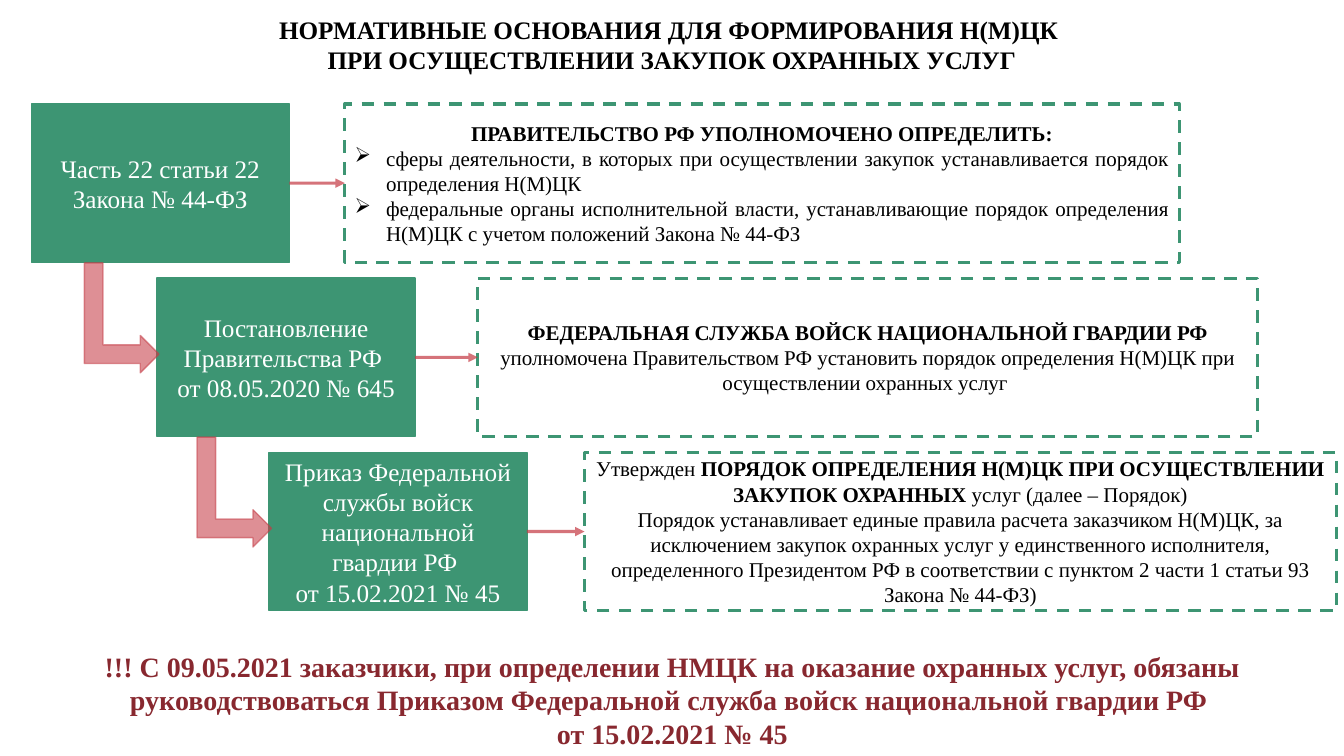
from dataclasses import dataclass

from lxml.etree import SubElement
from pptx import Presentation
from pptx.dml.color import RGBColor
from pptx.enum.dml import MSO_LINE
from pptx.enum.shapes import MSO_CONNECTOR, MSO_SHAPE
from pptx.enum.text import MSO_ANCHOR, PP_ALIGN
from pptx.oxml.ns import qn
from pptx.util import Cm, Pt

# Content: a paragraph is a tuple of (text, bold) runs
TITLE = [
    (("НОРМАТИВНЫЕ ОСНОВАНИЯ ДЛЯ ФОРМИРОВАНИЯ Н(М)ЦК ", True),
     ("\n", True),
     ("ПРИ ОСУЩЕСТВЛЕНИИ ЗАКУПОК ОХРАННЫХ УСЛУГ", True)),
]
ACTS = [
    [(("Часть 22 статьи 22 Закона № 44-ФЗ", False),)],
    [(("Постановление Правительства РФ ", False),),
     (("от 08.05.2020 № 645", False),)],
    [(("Приказ Федеральной службы войск национальной гвардии РФ ", False),),
     (("от 15.02.2021 № 45", False),)],
]
NOTES = [
    [(("ПРАВИТЕЛЬСТВО РФ УПОЛНОМОЧЕНО ОПРЕДЕЛИТЬ:", True),),
     (("сферы деятельности, в которых при осуществлении закупок "
       "устанавливается порядок определения Н(М)ЦК", False),),
     (("федеральные органы исполнительной власти, устанавливающие порядок "
       "определения Н(М)ЦК с учетом положений Закона № 44-ФЗ", False),)],
    [(("ФЕДЕРАЛЬНАЯ СЛУЖБА ВОЙСК НАЦИОНАЛЬНОЙ ГВАРДИИ РФ ", True),
      ("уполномочена Правительством РФ установить порядок определения "
       "Н(М)ЦК при осуществлении охранных услуг ", False))],
    [(("Утвержден ", False),
      ("ПОРЯДОК ОПРЕДЕЛЕНИЯ Н(М)ЦК ПРИ ОСУЩЕСТВЛЕНИИ ЗАКУПОК ОХРАННЫХ ", True),
      ("услуг (далее – Порядок)", False)),
     (("Порядок устанавливает единые правила расчета заказчиком Н(М)ЦК, за "
       "исключением закупок охранных услуг у единственного исполнителя, "
       "определенного Президентом РФ в соответствии с пунктом 2 части 1 "
       "статьи 93 Закона № 44-ФЗ)", False),)],
]
BULLETS = {0: (1, 2)}  # row: bulleted paragraphs of its note
ALERT = [
    (("!!! С 09.05.2021 заказчики, при определении НМЦК на оказание охранных "
      "услуг, обязаны руководствоваться Приказом Федеральной служба войск "
      "национальной гвардии РФ ", True),),
    (("от 15.02.2021 № 45", True),),
]

# Layout in centimetres
TOP, STEP, HIGH, WIDE = 2.62, 4.39, 3.99, 6.5
ACT_X = (0.79, 3.96, 6.78)
NOTE_X = (8.69, 12.04, 14.73)
NOTE_W = (21.03, 19.66, 18.95)
BEND_X = (1.68, 4.52)
BEND_W, BEND_H, BEND_DY = 2.77, 1.88, 0.06


@dataclass(frozen=True)
class Theme:
    face: str = "Times New Roman"
    green: RGBColor = RGBColor(0x3D, 0x95, 0x73)
    red: RGBColor = RGBColor(0xC5, 0x3B, 0x45)
    wine: RGBColor = RGBColor(0x88, 0x28, 0x2F)
    black: RGBColor = RGBColor(0, 0, 0)
    white: RGBColor = RGBColor(255, 255, 255)
    head: int = 18
    body: int = 15
    alert: int = 20


look = Theme()


def write(shape, paras, size, color, anchor=MSO_ANCHOR.MIDDLE, marks=()):
    frame = shape.text_frame
    frame.word_wrap = True
    frame.vertical_anchor = anchor
    for i, runs in enumerate(paras):
        para = frame.paragraphs[0] if i == 0 else frame.add_paragraph()
        para.alignment = PP_ALIGN.CENTER
        if i in marks:
            para.alignment = PP_ALIGN.JUSTIFY
            props = para._p.get_or_add_pPr()
            props.set("marL", str(Cm(0.79)))
            props.set("indent", str(-Cm(0.79)))
            SubElement(props, qn("a:buChar")).set("char", "➢")
        font = para.font
        font.name, font.size = look.face, Pt(size)
        font.color.rgb = color
        bolds = {bold for _, bold in runs}
        if len(bolds) == 1:
            font.bold = bolds.pop()
        for text, bold in runs:
            if text == "\n":
                para.add_line_break()
                continue
            run = para.add_run()
            run.text = text
            if font.bold is None:
                run.font.bold = bold


def label(x, y, w, h, *text):
    write(slide.shapes.add_textbox(Cm(x), Cm(y), Cm(w), Cm(h)), *text)


def block(kind, x, y, w, h, fill, line, width):
    shape = slide.shapes.add_shape(kind, Cm(x), Cm(y), Cm(w), Cm(h))
    shape.shadow.inherit = False
    if fill is None:
        shape.fill.background()
    else:
        shape.fill.solid()
        shape.fill.fore_color.rgb = fill
    shape.line.color.rgb = line
    shape.line.width = Pt(width)
    return shape


def fade(shape, share):
    for tint in shape._element.spPr.iter(qn("a:srgbClr")):
        SubElement(tint, qn("a:alpha")).set("val", str(share * 1000))


def link(act, note):
    line = slide.shapes.add_connector(MSO_CONNECTOR.STRAIGHT, 0, 0, 0, 0)
    line.begin_connect(act, 3)
    line.end_connect(note, 1)
    line.line.color.rgb = look.red
    line.line.width = Pt(2.25)
    fade(line, 71)
    SubElement(line.line._get_or_add_ln(), qn("a:tailEnd")).set("type", "triangle")
    SubElement(line._element.spPr, qn("a:effectLst"))


deck = Presentation()
deck.slide_width, deck.slide_height = Cm(33.87), Cm(19.05)
slide = deck.slides.add_slide(deck.slide_layouts[6])

# Title
label(0, 0, 33.87, 2.24, TITLE, look.head, look.black)

# Legal acts with their notes
pairs = []
for row, (x, left, wide) in enumerate(zip(ACT_X, NOTE_X, NOTE_W)):
    y = TOP + row * STEP
    act = block(MSO_SHAPE.RECTANGLE, x, y, WIDE, HIGH, look.green, look.green, 1)
    write(act, ACTS[row], look.head, look.white)
    note = block(MSO_SHAPE.RECTANGLE, left, y, wide, HIGH, None, look.green, 2.25)
    note.line.dash_style = MSO_LINE.DASH
    write(note, NOTES[row], look.body, look.black, marks=BULLETS.get(row, ()))
    pairs.append((act, note))

# Closing warning
label(1.5, 16.23, 30.89, 2.82, ALERT, look.alert, look.wine, MSO_ANCHOR.TOP)

# Bent arrows from one act to the next
for row, x in enumerate(BEND_X, 1):
    bend = block(MSO_SHAPE.BENT_UP_ARROW, x, TOP + row * STEP + BEND_DY,
                 BEND_W, BEND_H, look.red, look.red, 1)
    bend.rotation = 90
    fade(bend, 57)

# Straight arrows from act to note
for act, note in pairs:
    link(act, note)

deck.save("out.pptx")
